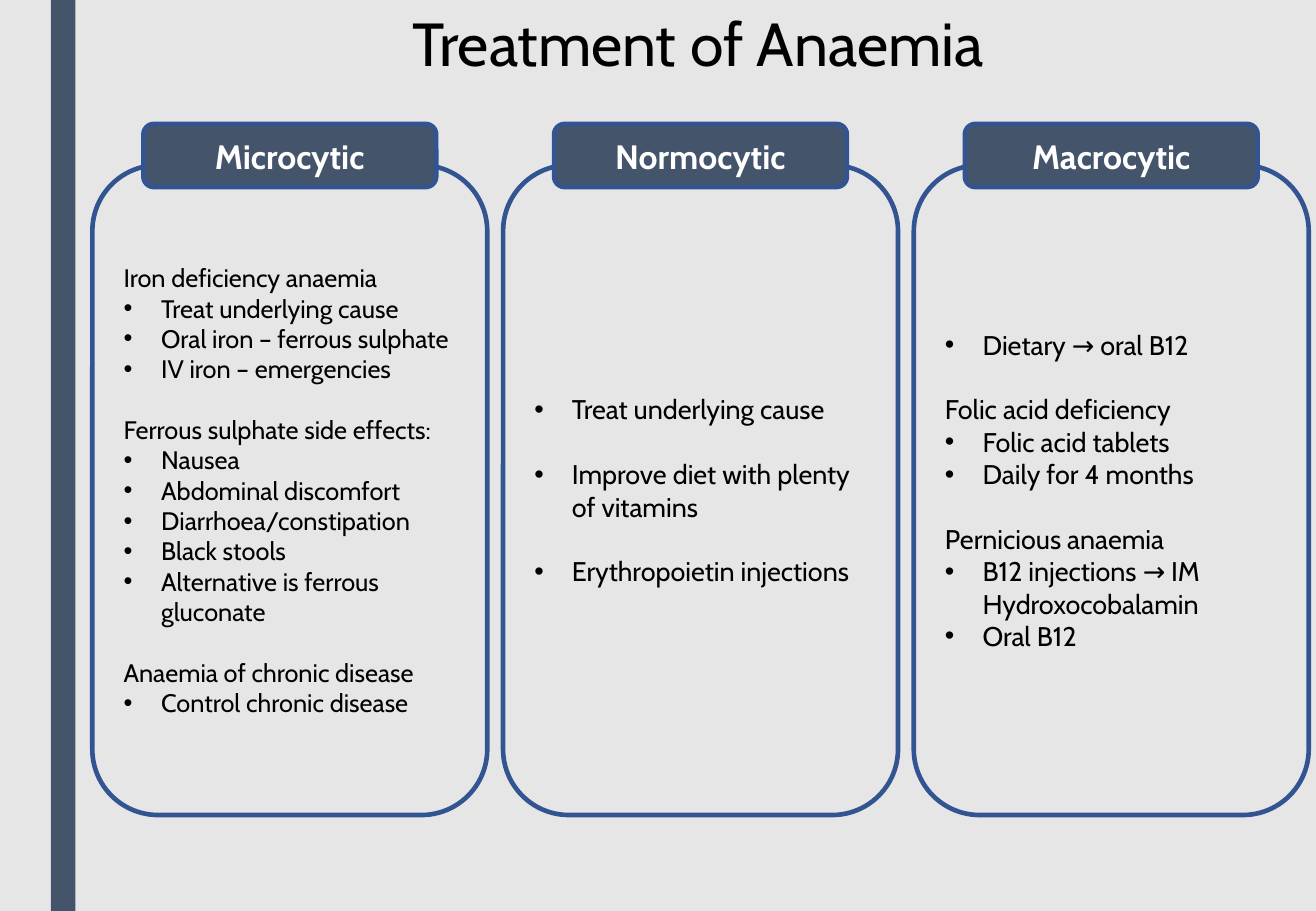
from lxml import etree
from pptx import Presentation
from pptx import util as u
from pptx.dml.color import RGBColor
from pptx.enum import shapes, text
from pptx.oxml import ns

NAVY = RGBColor(0x44, 0x54, 0x6A)
BLUE = RGBColor(0x32, 0x54, 0x91)
GREY = RGBColor(0xE7, 0xE6, 0xE6)
BLACK = RGBColor(0, 0, 0)
WHITE = RGBColor(0xFF, 0xFF, 0xFF)
LINE_HEIGHT = 1.2

# Column title, text size, groups of (heading, bullets)
COLUMNS = [
    ("Microcytic", 15, [
        ("Iron deficiency anaemia",
         ["Treat underlying cause", "Oral iron – ferrous sulphate",
          "IV iron – emergencies"]),
        ("Ferrous sulphate side effects:",
         ["Nausea", "Abdominal discomfort", "Diarrhoea/constipation",
          "Black stools", "Alternative is ferrous gluconate"]),
        ("Anaemia of chronic disease", ["Control chronic disease"]),
    ]),
    ("Normocytic", 16, [
        (None, ["Treat underlying cause"]),
        (None, ["Improve diet with plenty of vitamins"]),
        (None, ["Erythropoietin injections"]),
    ]),
    ("Macrocytic", 16, [
        (None, ["Dietary → oral B12"]),
        ("Folic acid deficiency", ["Folic acid tablets", "Daily for 4 months"]),
        ("Pernicious anaemia",
         ["B12 injections → IM Hydroxocobalamin", "Oral B12"]),
    ]),
]


def write(para, words, size, color=BLACK, bold=False, align=text.PP_ALIGN.LEFT,
          bullet=False, before=0):
    para.alignment = align
    para.space_before = u.Pt(before)
    span = para.add_run()
    span.text = words
    span.font.name = "Cabin"
    span.font.size = u.Pt(size)
    span.font.bold = bold
    span.font.color.rgb = color
    if bullet:
        props = para._p.get_or_add_pPr()
        props.set("marL", str(u.Inches(0.31)))
        props.set("indent", str(-u.Inches(0.31)))
        etree.SubElement(props, ns.qn("a:buFont"), typeface="Arial")
        etree.SubElement(props, ns.qn("a:buChar"), char="•")


def add_box(page, kind, left, top, width, height, fill=None, line=None):
    box = page.shapes.add_shape(kind, u.Inches(left), u.Inches(top),
                                u.Inches(width), u.Inches(height))
    box.shadow.inherit = False
    if fill is None:
        box.fill.background()
    else:
        box.fill.solid()
        box.fill.fore_color.rgb = fill
    if line is None:
        box.line.fill.background()
    else:
        box.line.color.rgb = line
        box.line.width = u.Pt(2.75)
    box.text_frame.word_wrap = True
    box.text_frame.vertical_anchor = text.MSO_ANCHOR.MIDDLE
    return box


deck = Presentation()
deck.slide_width, deck.slide_height = u.Inches(10.83), u.Inches(7.5)
page = deck.slides.add_slide(deck.slide_layouts[5])
page.background.fill.solid()
page.background.fill.fore_color.rgb = GREY

# Side bar
add_box(page, shapes.MSO_SHAPE.RECTANGLE, 0.42, 0, 0.2, 7.5, fill=NAVY)

# Title
title = page.shapes.title
title.left, title.top = u.Inches(0.66), u.Inches(0)
title.width, title.height = u.Inches(10.17), u.Inches(0.71)
title.text_frame.auto_size = text.MSO_AUTO_SIZE.NONE
title.text_frame.vertical_anchor = text.MSO_ANCHOR.TOP
write(title.text_frame.paragraphs[0], "Treatment of Anaemia", 36,
      align=text.PP_ALIGN.CENTER)

# Treatment columns, each with a label over its top edge
card_width, label_width, pitch = 3.25, 2.41, 3.38
for column, (name, size, groups) in enumerate(COLUMNS):
    left = 0.76 + column * pitch
    card = add_box(page, shapes.MSO_SHAPE.ROUNDED_RECTANGLE,
                   left, 1.36, card_width, 5.35, line=BLUE)
    frame = card.text_frame
    lines = []
    for heading, bullets in groups:
        block = [(heading, False)] if heading else []
        block += [(item, True) for item in bullets]
        for place, (words, bullet) in enumerate(block):
            starts_group = place == 0 and len(lines) > 0
            lines.append((words, bullet, size * LINE_HEIGHT if starts_group else 0))
    for number, (words, bullet, before) in enumerate(lines):
        para = frame.add_paragraph() if number else frame.paragraphs[0]
        write(para, words, size, bullet=bullet, before=before)

    label = add_box(page, shapes.MSO_SHAPE.ROUNDED_RECTANGLE,
                    left + (card_width - label_width) / 2, 1.02,
                    label_width, 0.52, fill=NAVY, line=BLUE)
    write(label.text_frame.paragraphs[0], name, 20, color=WHITE, bold=True,
          align=text.PP_ALIGN.CENTER)

deck.save("out.pptx")
